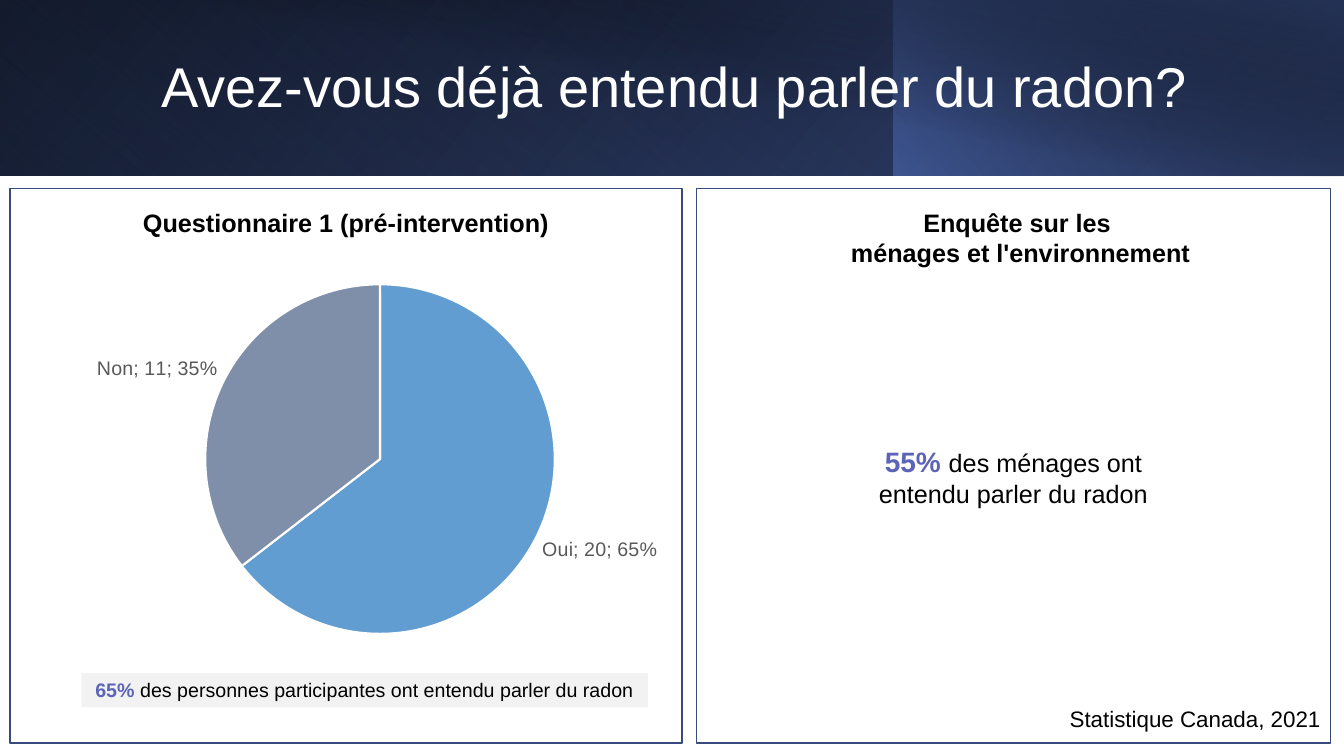
import pptx
import pptx.chart.data
import pptx.dml.color
import pptx.enum.chart
import pptx.enum.shapes
import pptx.enum.text
import pptx.oxml
import pptx.oxml.ns
import pptx.util
from lxml import etree

Cm, Pt = pptx.util.Cm, pptx.util.Pt
ALIGN = pptx.enum.text.PP_ALIGN
ANCHOR = pptx.enum.text.MSO_ANCHOR
COLORS = {
    "white": "FFFFFF", "black": "000000", "navy": "253356", "blue": "4A66AC",
    "deep blue": "384C81", "border": "374B7F", "accent": "5C64B7",
    "pale grey": "F2F2F2", "label": "595959", "yes": "629DD1", "no": "7F8FA9",
}


def rgb(name):
    return pptx.dml.color.RGBColor.from_string(COLORS[name])


class SlideBuilder:
    FONT = "Arial"

    def __init__(self, slide):
        self.slide = slide

    def style(self, font, size, color="black", bold=False):
        font.name, font.size, font.bold = self.FONT, Pt(size), bold
        font.color.rgb = rgb(color)

    def rectangle(self, left, top, width, height, fill=None, line=None):
        shape = self.slide.shapes.add_shape(
            pptx.enum.shapes.MSO_SHAPE.RECTANGLE,
            Cm(left), Cm(top), Cm(width), Cm(height))
        shape.shadow.inherit = False
        if fill:
            shape.fill.solid()
            shape.fill.fore_color.rgb = rgb(fill)
        if line:
            shape.line.color.rgb = rgb(line)
            shape.line.width = Pt(1)
        else:
            shape.line.fill.background()
        return shape

    def gradient(self, left, width, height, stops, angle, flip=True, rotation=0):
        """Banner layer; stops are (position %, colour, opacity %)."""
        shape = self.rectangle(left, 0, width, height)
        shape.rotation = rotation
        properties = shape._element.spPr
        if flip:
            properties.find(pptx.oxml.ns.qn("a:xfrm")).set("flipH", "1")
        stop_xml = "".join(
            f'<a:gs pos="{position * 1000}"><a:srgbClr val="{COLORS[color]}">'
            f'<a:alpha val="{opacity * 1000}"/></a:srgbClr></a:gs>'
            for position, color, opacity in stops)
        geometry = properties.find(pptx.oxml.ns.qn("a:prstGeom"))
        geometry.addnext(pptx.oxml.parse_xml(
            f'<a:gradFill {pptx.oxml.ns.nsdecls("a")} rotWithShape="1">'
            f'<a:gsLst>{stop_xml}</a:gsLst>'
            f'<a:lin ang="{angle * 60000}" scaled="0"/></a:gradFill>'))

    def text_box(self, left, top, width, height):
        return self.slide.shapes.add_textbox(
            Cm(left), Cm(top), Cm(width), Cm(height))

    def set_text(self, shape, lines, size, color="black", bold=False,
                 align=ALIGN.CENTER, anchor=ANCHOR.TOP):
        frame = shape.text_frame
        frame.word_wrap = True
        frame.vertical_anchor = anchor
        frame.text = "\n".join(lines)
        for paragraph in frame.paragraphs:
            paragraph.alignment = align
            self.style(paragraph.font, size, color, bold)
        return frame

    def set_figure(self, shape, figure, figure_size, text, size):
        """Sentence that opens with a highlighted percentage."""
        frame = self.set_text(shape, [], size)
        for content, run_size, color, bold in (
                (figure, figure_size, "accent", True), (text, size, "black", False)):
            run = frame.paragraphs[0].add_run()
            run.text = content
            self.style(run.font, run_size, color, bold)

    def pie(self, left, top, width, height, answers, plot_area):
        """answers are (category, value, colour); plot_area holds x, y, w, h."""
        data = pptx.chart.data.CategoryChartData()
        data.categories = [category for category, _, _ in answers]
        data.add_series("Series 1", [value for _, value, _ in answers])
        chart = self.slide.shapes.add_chart(
            pptx.enum.chart.XL_CHART_TYPE.PIE,
            Cm(left), Cm(top), Cm(width), Cm(height), data).chart
        chart.has_title = chart.has_legend = False
        self.style(chart.font, 10)
        plot = chart.plots[0]
        plot.vary_by_categories = True
        for index, (_, _, color) in enumerate(answers):
            point = plot.series[0].points[index].format
            point.fill.solid()
            point.fill.fore_color.rgb = rgb(color)
            point.line.color.rgb = rgb("white")
            point.line.width = Pt(1.5)
        labels = plot.series[0].data_labels
        labels.show_category_name = labels.show_value = labels.show_percentage = True
        labels.position = pptx.enum.chart.XL_LABEL_POSITION.OUTSIDE_END
        self.style(labels.font, 14, "label")
        qn = pptx.oxml.ns.qn
        separator = etree.Element(qn("c:separator"))
        separator.text = "; "
        labels._element.find(qn("c:showBubbleSize")).addnext(separator)

        area = chart._chartSpace.chart.plotArea
        for old_layout in area.findall(qn("c:layout")):
            area.remove(old_layout)
        layout = etree.Element(qn("c:layout"))
        manual = etree.SubElement(layout, qn("c:manualLayout"))
        settings = [("layoutTarget", "inner"), ("xMode", "edge"), ("yMode", "edge")]
        for tag, value in settings + list(zip("xywh", plot_area)):
            etree.SubElement(manual, qn(f"c:{tag}")).set("val", str(value))
        area.insert(0, layout)


def main():
    presentation = pptx.Presentation()
    presentation.slide_width, presentation.slide_height = Cm(33.87), Cm(19.05)
    slide = presentation.slides.add_slide(presentation.slide_layouts[6])
    builder = SlideBuilder(slide)

    builder.gradient(0, 33.87, 4.43,
                     [(0, "black", 100), (100, "deep blue", 100)], 140)
    builder.gradient(0, 22.55, 4.43,
                     [(20, "blue", 0), (100, "navy", 55)], 230, rotation=180)
    builder.gradient(22.53, 11.34, 4.43,
                     [(0, "blue", 66), (100, "black", 30)], 220)
    builder.gradient(1.27, 32.6, 4.44,
                     [(50, "black", 0), (99, "navy", 52)], 280, flip=False)
    title = builder.text_box(3.81, 0.81, 27.48, 2.87)
    frame = builder.set_text(title, ["Avez-vous déjà entendu parler du radon?"], 40,
                             "white", align=ALIGN.LEFT, anchor=ANCHOR.MIDDLE)
    frame.paragraphs[0].line_spacing = 0.9

    builder.rectangle(0.25, 4.75, 16.94, 13.97, "white", "border")
    builder.set_text(builder.text_box(0.25, 5.1, 16.94, 1.02),
                     ["Questionnaire 1 (pré-intervention)"], 18, bold=True)

    builder.rectangle(17.55, 4.75, 15.98, 13.97, "white", "border")
    builder.set_text(builder.text_box(17.73, 5.1, 15.98, 1.8),
                     ["Enquête sur les ", "ménages et l'environnement"], 18, bold=True)
    builder.set_figure(builder.text_box(20.83, 11.07, 9.42, 1.88),
                       "55% ", 20, "des ménages ont entendu parler du radon", 18)
    builder.set_text(builder.text_box(23.19, 17.65, 10.34, 0.94),
                     ["Statistique Canada, 2021"], 16, align=ALIGN.RIGHT)

    builder.set_figure(
        builder.rectangle(2.05, 16.96, 14.28, 0.86, "pale grey"), "65% ", 14,
        "des personnes participantes ont entendu parler du radon", 14)
    builder.pie(0.43, 6.73, 16.94, 9.68,
                [("Oui", 20, "yes"), ("Non", 11, "no")], (0.28, 0.04, 0.52, 0.92))

    presentation.save("out.pptx")


if __name__ == "__main__":
    main()
